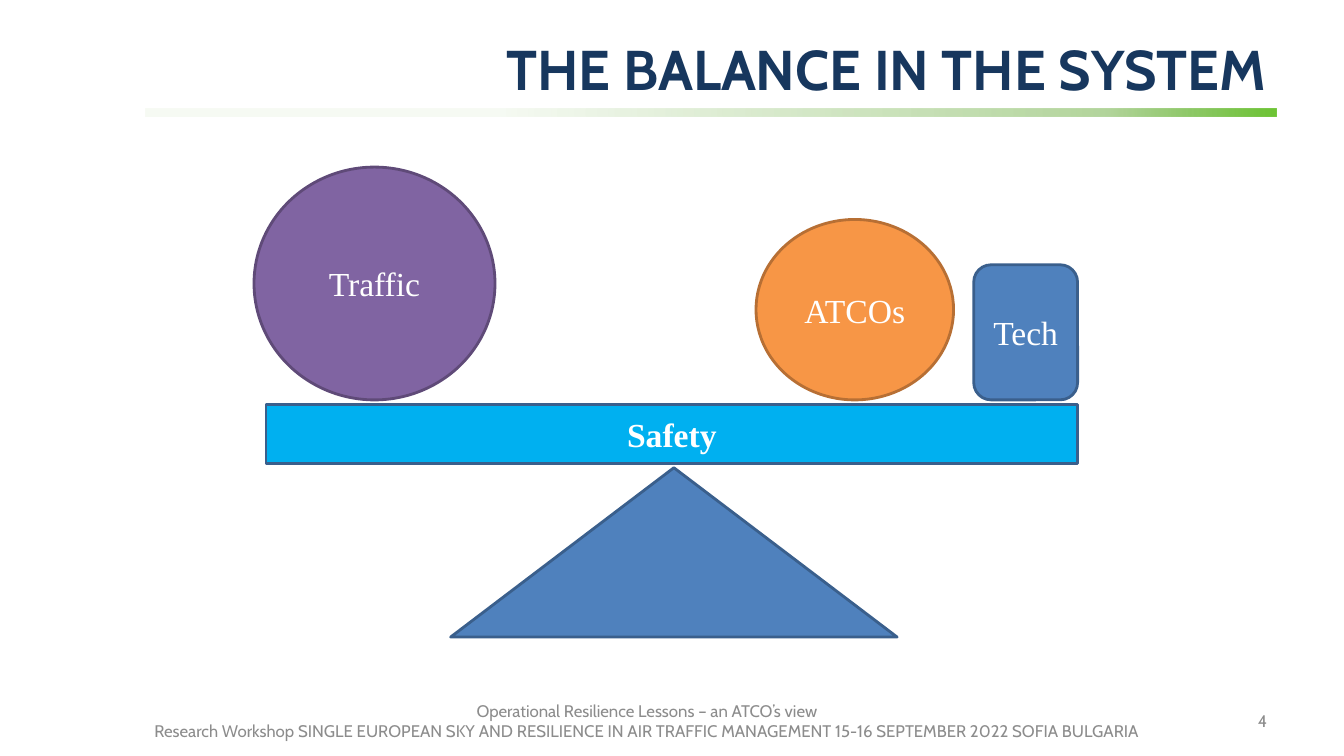
from lxml import etree
from pptx import Presentation
from pptx import util as u
from pptx.dml.color import RGBColor
from pptx.enum import shapes, text
from pptx.oxml import ns

HUES = {
    "navy": "17375E", "grey": "8C8C8C", "white": "FFFFFF",
    "purple": "8064A2", "plum": "5F4A78", "blue": "4F81BD", "steel": "3A5F8C",
    "sky": "00B0F0", "orange": "F79646", "rust": "B76F34", "leaf": "5DA62C", "lime": "6EC535",
}
FORM = shapes.MSO_SHAPE
ALIGN = text.PP_ALIGN
ANCHOR = text.MSO_ANCHOR


def hue(name):
    return RGBColor.from_string(HUES[name])


def write(frame, words, font="Cabin", size=12, color="grey", bold=False,
          align=ALIGN.CENTER, anchor=ANCHOR.MIDDLE, inset=None, lead=None):
    """Fill a text frame, one paragraph per line of words."""
    frame.word_wrap = True
    frame.vertical_anchor = anchor
    if inset is not None:
        frame.margin_left = frame.margin_right = u.Inches(inset)
        frame.margin_top = frame.margin_bottom = u.Inches(inset)
    for i, line in enumerate(words.split("\n")):
        para = frame.add_paragraph() if i else frame.paragraphs[0]
        para.alignment = align
        if lead:
            para.line_spacing = lead
        run = para.add_run()
        run.text = line
        run.font.name, run.font.size, run.font.bold = font, u.Pt(size), bold
        run.font.color.rgb = hue(color)


class Deck:
    """Places elements by percent of the slide's width and height."""

    def __init__(self):
        self.prs = Presentation()
        self.prs.slide_width, self.prs.slide_height = u.Inches(13.33), u.Inches(7.5)
        self.slide = self.prs.slides.add_slide(self.prs.slide_layouts[6])

    def box(self, x, y, w, h):
        wide, high = self.prs.slide_width / 100, self.prs.slide_height / 100
        return int(x * wide), int(y * high), int(w * wide), int(h * high)

    def label(self, area, words, **style):
        write(self.slide.shapes.add_textbox(*self.box(*area)).text_frame, words, **style)

    def shape(self, form, area, fill, edge=None, words=None, **style):
        item = self.slide.shapes.add_shape(form, *self.box(*area))
        item.shadow.inherit = False
        item.fill.solid()
        item.fill.fore_color.rgb = hue(fill)
        if edge:
            item.line.color.rgb = hue(edge)
            item.line.width = u.Pt(2)
        else:
            item.line.fill.background()
        if words:
            write(item.text_frame, words, font="Times New Roman", size=24,
                  color="white", **style)
        return item

    def fade(self, area, stops):
        """Bar with a left-to-right gradient; stops are (place, hue, opacity)."""
        bar = self.shape(FORM.RECTANGLE, area, stops[-1][1])
        bar.fill.gradient()
        bar.fill.gradient_angle = 0
        marks = bar._element.spPr.find(".//" + ns.qn("a:gsLst"))
        for old in list(marks):
            marks.remove(old)
        for place, name, solid in stops:
            mark = etree.SubElement(marks, ns.qn("a:gs"), pos=str(place * 1000))
            tint = etree.SubElement(mark, ns.qn("a:srgbClr"), val=HUES[name])
            if solid < 100:
                etree.SubElement(tint, ns.qn("a:alpha"), val=str(solid * 1000))


def main():
    deck = Deck()

    # Title and rule
    deck.fade((10.8, 14.4, 84.15, 1.07),
              [(31, "leaf", 5), (85, "leaf", 47), (100, "lime", 100)])
    deck.label((33.75, 4.93, 61.2, 9.47), "THE BALANCE IN THE SYSTEM", size=40,
               color="navy", bold=True, align=ALIGN.RIGHT, anchor=ANCHOR.TOP, lead=0.9)

    # Footer
    deck.label((71.7, 92.67, 23.33, 5.33), "4", align=ALIGN.RIGHT)
    deck.label((6.9, 92.67, 82.5, 5.33),
               "Operational Resilience Lessons – an ATCO’s view\n"
               "Research Workshop SINGLE EUROPEAN SKY AND RESILIENCE IN AIR TRAFFIC "
               "MANAGEMENT 15-16 SEPTEMBER 2022 SOFIA BULGARIA")

    # Beam and pivot
    deck.shape(FORM.ISOSCELES_TRIANGLE, (33.53, 61.87, 33.22, 22.4), "blue", "steel")
    deck.shape(FORM.RECTANGLE, (19.8, 53.47, 60.38, 7.87), "sky", "steel", "Safety",
               bold=True, inset=0)

    # Weights, all resting on one base line
    base = 52.9
    for form, left, wide, high, fill, edge, words, inset in (
            (FORM.OVAL, 18.9, 17.93, 30.8, "purple", "plum", "Traffic", 0),
            (FORM.ROUNDED_RECTANGLE, 72.45, 7.73, 17.87, "blue", "steel", "Tech", 0),
            (FORM.OVAL, 56.25, 14.7, 23.87, "orange", "rust", "ATCOs", 0.04)):
        deck.shape(form, (left, base - high, wide, high), fill, edge, words, inset=inset)

    deck.prs.save("out.pptx")


if __name__ == "__main__":
    main()
